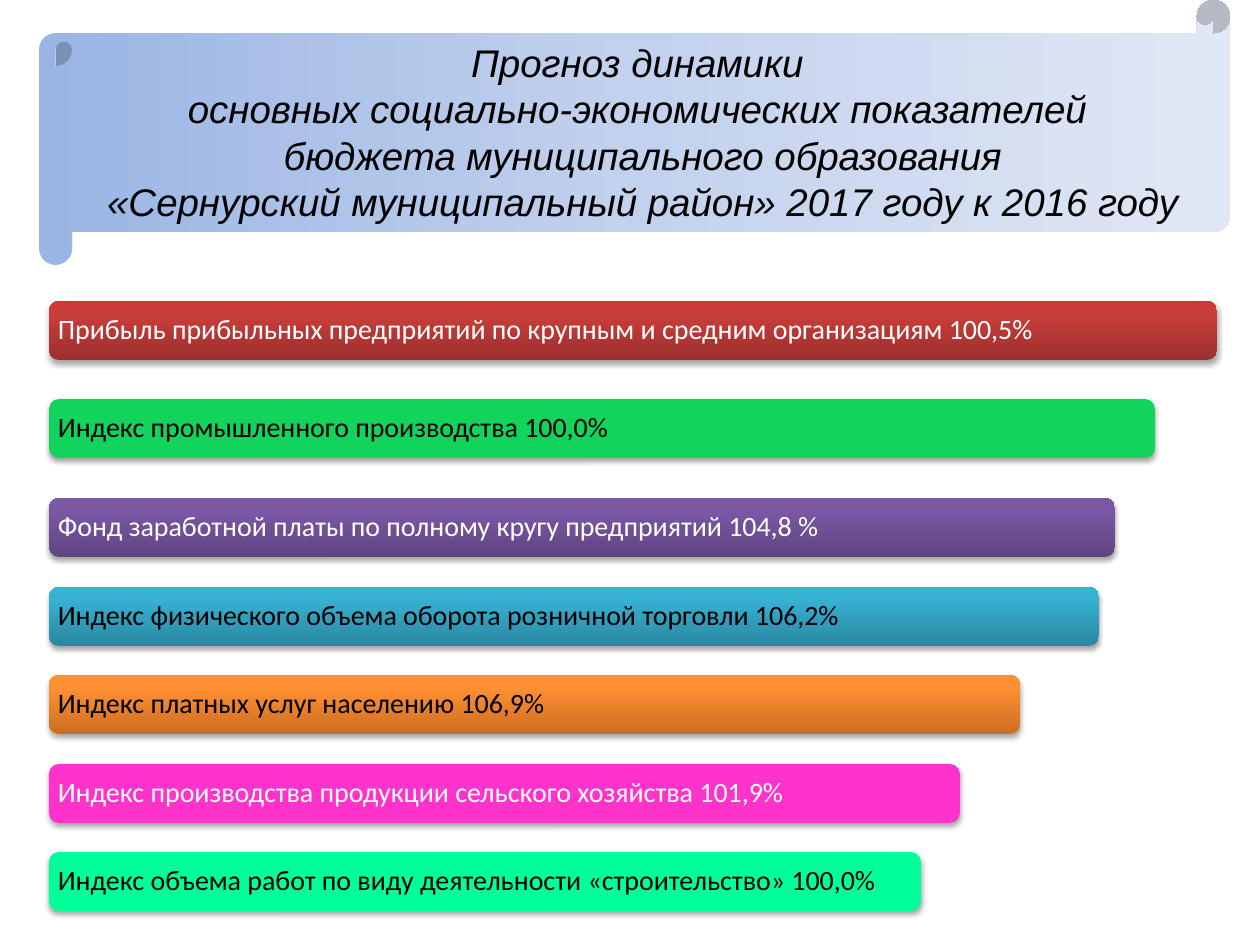
from lxml import etree
from pptx import Presentation
from pptx.dml.color import RGBColor
from pptx.enum.shapes import MSO_SHAPE
from pptx.enum.text import MSO_ANCHOR, PP_ALIGN
from pptx.oxml.ns import qn
from pptx.util import Emu, Pt

ROUNDED = MSO_SHAPE.ROUNDED_RECTANGLE
SCROLL = MSO_SHAPE.HORIZONTAL_SCROLL
MIDDLE, TOP = MSO_ANCHOR.MIDDLE, MSO_ANCHOR.TOP
LEFT, CENTER = PP_ALIGN.LEFT, PP_ALIGN.CENTER

PX = 914400 // 126
BLACK = RGBColor(0x00, 0x00, 0x00)
WHITE = RGBColor(0xFF, 0xFF, 0xFF)
GREEN = RGBColor(0x12, 0xD4, 0x5C)
PINK = RGBColor(0xFF, 0x33, 0xCC)
MINT = RGBColor(0x00, 0xFF, 0x99)
RED_STOPS = (
    (0, RGBColor(0x9C, 0x2F, 0x2D)),
    (80, RGBColor(0xCB, 0x3E, 0x3A)),
    (100, RGBColor(0xCE, 0x3B, 0x37)),
)
PURPLE_STOPS = (
    (0, RGBColor(0x5F, 0x44, 0x80)),
    (80, RGBColor(0x7B, 0x58, 0xA6)),
    (100, RGBColor(0x7C, 0x57, 0xA8)),
)
TEAL_STOPS = (
    (0, RGBColor(0x2A, 0x88, 0xA2)),
    (80, RGBColor(0x37, 0xB1, 0xD2)),
    (100, RGBColor(0x34, 0xB4, 0xD6)),
)
ORANGE_STOPS = (
    (0, RGBColor(0xCC, 0x6E, 0x20)),
    (80, RGBColor(0xFF, 0x90, 0x34)),
    (100, RGBColor(0xFF, 0x91, 0x36)),
)
SCROLL_STOPS = (
    (0, RGBColor(0x9A, 0xB5, 0xE4)),
    (50, RGBColor(0xC2, 0xD1, 0xED)),
    (100, RGBColor(0xE1, 0xE8, 0xF5)),
)

TITLE_LINES = (
    "Прогноз динамики ",
    "основных социально-экономических показателей ",
    "бюджета муниципального образования",
    "«Сернурский муниципальный район» 2017 году к 2016 году",
)
BAR_HEIGHT = 59
BAR_INSET = 6
INDICATORS = (
    (0, 1168, RED_STOPS, WHITE,
     "Прибыль прибыльных предприятий по крупным и средним организациям 100,5%"),
    (98, 1106, GREEN, BLACK, "Индекс промышленного производства 100,0%"),
    (197, 1066, PURPLE_STOPS, WHITE,
     "Фонд заработной платы по полному кругу предприятий 104,8 %"),
    (286, 1050, TEAL_STOPS, BLACK,
     "Индекс физического объема оборота розничной торговли 106,2%"),
    (374, 971, ORANGE_STOPS, BLACK, "Индекс платных услуг населению 106,9%"),
    (463, 911, PINK, WHITE,
     "Индекс производства продукции сельского хозяйства 101,9%"),
    (551, 872, MINT, BLACK,
     "Индекс объема работ по виду деятельности «строительство» 100,0%"),
)


def px(length):
    return Emu(length * PX)


def add_plain_shape(slide, kind, left, top, width, height):
    shape = slide.shapes.add_shape(kind, px(left), px(top), px(width), px(height))
    shape.shadow.inherit = False
    shape.line.fill.background()
    shape.text_frame.word_wrap = True
    return shape


def fill_gradient(shape, stops, angle):
    shape.fill.gradient()
    shape.fill.gradient_angle = angle
    stop_list = shape.fill._xPr.find(qn("a:gradFill")).find(qn("a:gsLst"))
    for stop in list(stop_list):
        stop_list.remove(stop)
    for percent, color in stops:
        stop = etree.SubElement(stop_list, qn("a:gs"), pos=str(percent * 1000))
        etree.SubElement(stop, qn("a:srgbClr"), val=str(color))


def add_soft_shadow(shape):
    effects = shape._element.spPr.find(qn("a:effectLst"))
    shadow = etree.SubElement(
        effects, qn("a:outerShdw"), blurRad=str(Pt(3.1)), dist=str(Pt(1.8)),
        dir="5400000", rotWithShape="0")
    color = etree.SubElement(shadow, qn("a:srgbClr"), val=str(BLACK))
    etree.SubElement(color, qn("a:alpha"), val="35000")


def style_paragraph(paragraph, font_name, size, color, alignment):
    paragraph.alignment = alignment
    paragraph.font.name = font_name
    paragraph.font.size = Pt(size)
    paragraph.font.color.rgb = color


def add_title_scroll(slide, left, top, width, height):
    scroll = add_plain_shape(slide, SCROLL, left, top, width, height)
    fill_gradient(scroll, SCROLL_STOPS, 0)
    frame = scroll.text_frame
    frame.vertical_anchor = TOP
    frame.text = "\n".join(TITLE_LINES)
    for paragraph in frame.paragraphs:
        style_paragraph(paragraph, "Arial", 22, BLACK, CENTER)
        paragraph.font.italic = True


def add_bar(slide, left, top, width, fill, text_color, text):
    bar = add_plain_shape(slide, ROUNDED, left, top, width, BAR_HEIGHT)
    add_soft_shadow(bar)
    if isinstance(fill, RGBColor):
        bar.fill.solid()
        bar.fill.fore_color.rgb = fill
    else:
        fill_gradient(bar, fill, 90)
    frame = bar.text_frame
    frame.vertical_anchor = MIDDLE
    frame.margin_left = frame.margin_right = px(BAR_INSET)
    frame.margin_top = frame.margin_bottom = px(BAR_INSET)
    frame.text = text
    paragraph = frame.paragraphs[0]
    style_paragraph(paragraph, "Calibri", 16, text_color, LEFT)
    paragraph.line_spacing = 0.9


def add_indicator_bars(slide, left, top):
    for offset, width, fill, text_color, text in INDICATORS:
        add_bar(slide, left, top + offset, width, fill, text_color, text)


def main():
    presentation = Presentation()
    presentation.slide_width = px(1260)
    presentation.slide_height = px(945)
    slide = presentation.slides.add_slide(presentation.slide_layouts[6])
    add_indicator_bars(slide, 49, 301)
    add_title_scroll(slide, 39, 0, 1191, 265)
    presentation.save("out.pptx")


if __name__ == "__main__":
    main()
